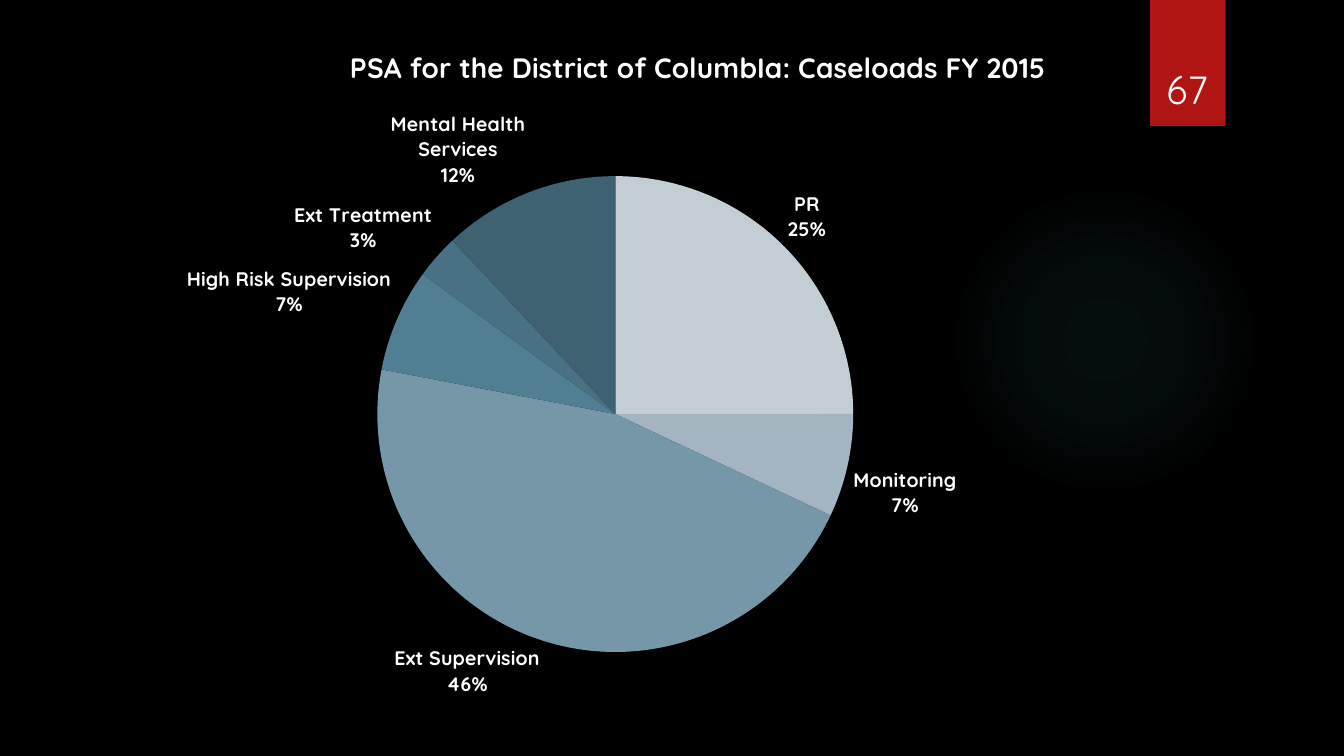
from lxml.etree import SubElement
from pptx import Presentation
from pptx.chart.data import CategoryChartData
from pptx.dml.color import RGBColor
from pptx.enum.chart import XL_CHART_TYPE, XL_LABEL_POSITION
from pptx.enum.shapes import MSO_SHAPE
from pptx.enum.text import MSO_ANCHOR, PP_ALIGN
from pptx.oxml import parse_xml
from pptx.oxml.ns import nsdecls, qn
from pptx.util import Pt

COLORS = {
    "background": "000000",
    "text": "FFFFFF",
    "ribbon": "B01513",
    "glow": "50B9C1",
    "shadow": "000000",
}
CASELOADS = [
    ("PR", 25, "C3CED4"),
    ("Monitoring", 7, "A2B5C0"),
    ("Ext Supervision", 46, "7697A8"),
    ("High Risk Supervision", 7, "507E93"),
    ("Ext Treatment", 3, "487184"),
    ("Mental Health Services", 12, "3E6272"),
]


def format_font(font, size, color="text", bold=False):
    font.name = "Quicksand"
    font.size = Pt(size)
    font.bold = bold
    font.color.rgb = RGBColor.from_string(COLORS[color])


def write_text(text_frame, text, size, color="text", bold=False, align=PP_ALIGN.CENTER):
    paragraph = text_frame.paragraphs[0]
    paragraph.alignment = align
    run = paragraph.add_run()
    run.text = text
    format_font(run.font, size, color, bold)


def set_layout(parent, position, **fractions):
    for old_layout in parent.findall(qn("c:layout")):
        parent.remove(old_layout)
    layout = parent.makeelement(qn("c:layout"))
    parent.insert(position, layout)
    manual = SubElement(layout, qn("c:manualLayout"))
    if "w" in fractions:
        SubElement(manual, qn("c:layoutTarget")).set("val", "inner")
    for axis in "xy":
        SubElement(manual, qn(f"c:{axis}Mode")).set("val", "edge")
    for key, fraction in fractions.items():
        SubElement(manual, qn(f"c:{key}")).set("val", str(fraction))


class SlideBuilder:
    def __init__(self, presentation):
        self.slide = presentation.slides.add_slide(presentation.slide_layouts[6])
        self.paint(self.slide.background.fill, COLORS["background"])

    def paint(self, fill, color):
        fill.solid()
        fill.fore_color.rgb = RGBColor.from_string(color)

    def shape(self, kind, left, top, width, height, color):
        shape = self.slide.shapes.add_shape(kind, Pt(left), Pt(top), Pt(width), Pt(height))
        shape.shadow.inherit = False
        self.paint(shape.fill, COLORS[color])
        shape.line.fill.background()
        return shape

    def glow(self, left, top, diameter, stops):
        shape = self.shape(MSO_SHAPE.OVAL, left, top, diameter, diameter, "glow")
        stop_xml = "".join(
            f'<a:gs pos="{position * 1000}"><a:srgbClr val="{COLORS["glow"]}">'
            f'<a:alpha val="{alpha * 1000}"/></a:srgbClr></a:gs>'
            for position, alpha in stops
        )
        gradient = parse_xml(
            f'<a:gradFill {nsdecls("a")}><a:gsLst>{stop_xml}</a:gsLst><a:path path="circle">'
            '<a:fillToRect l="50000" t="50000" r="50000" b="50000"/></a:path></a:gradFill>'
        )
        properties = shape._element.spPr
        properties.replace(properties.find(qn("a:solidFill")), gradient)

    def ribbon(self, left, top, width, height):
        shape = self.shape(MSO_SHAPE.RECTANGLE, left, top, width, height, "ribbon")
        shadow = parse_xml(
            f'<a:outerShdw {nsdecls("a")} blurRad="{Pt(3)}" dist="{Pt(2)}" dir="5400000">'
            f'<a:srgbClr val="{COLORS["shadow"]}"><a:alpha val="45000"/></a:srgbClr></a:outerShdw>'
        )
        shape._element.spPr.find(qn("a:effectLst")).append(shadow)

    def text(self, text, left, top, width, height, size):
        box = self.slide.shapes.add_textbox(Pt(left), Pt(top), Pt(width), Pt(height))
        box.text_frame.word_wrap = True
        box.text_frame.vertical_anchor = MSO_ANCHOR.BOTTOM
        write_text(box.text_frame, text, size)

    def pie(self, title, slices, left, top, width, height):
        data = CategoryChartData()
        data.categories = [name for name, _, _ in slices]
        data.add_series("Series 1", [value for _, value, _ in slices])
        chart = self.slide.shapes.add_chart(
            XL_CHART_TYPE.PIE, Pt(left), Pt(top), Pt(width), Pt(height), data
        ).chart
        chart.has_legend = False
        format_font(chart.font, 10)

        chart.has_title = True
        write_text(chart.chart_title.text_frame, title, 20, bold=True)
        set_layout(chart.chart_title._element, 1, x=0.29, y=0.03)
        plot_area = chart._chartSpace.chart.plotArea
        set_layout(plot_area, 0, x=0.32, y=0.22, w=0.44, h=0.69)

        plot = chart.plots[0]
        plot.vary_by_categories = True
        for index, (_, _, color) in enumerate(slices):
            point_format = plot.series[0].points[index].format
            self.paint(point_format.fill, color)
            point_format.line.fill.background()
        self.pie_labels(plot)

    def pie_labels(self, plot):
        plot.has_data_labels = True
        labels = plot.data_labels
        format_font(labels.font, 14, bold=True)
        labels.number_format = "0%"
        labels.number_format_is_linked = False
        labels.position = XL_LABEL_POSITION.OUTSIDE_END
        labels.show_value = False
        labels.show_category_name = True
        labels.show_percentage = True
        separator = parse_xml(f'<c:separator {nsdecls("c")}>\n</c:separator>')
        labels._element.find(qn("c:showBubbleSize")).addnext(separator)


def main():
    presentation = Presentation()
    presentation.slide_width = Pt(960)
    presentation.slide_height = Pt(540)
    builder = SlideBuilder(presentation)
    builder.glow(677.5, 132, 222, [(0, 7), (36, 6), (69, 0)])
    builder.ribbon(821.5, 0, 54, 90)
    builder.text("67", 815, 23, 66, 60.5, size=28)
    builder.pie(
        "PSA for the District of ColumbIa: Caseloads FY 2015",
        CASELOADS, 22.3, 15.1, 772.6, 496.8,
    )
    presentation.save("out.pptx")


if __name__ == "__main__":
    main()
